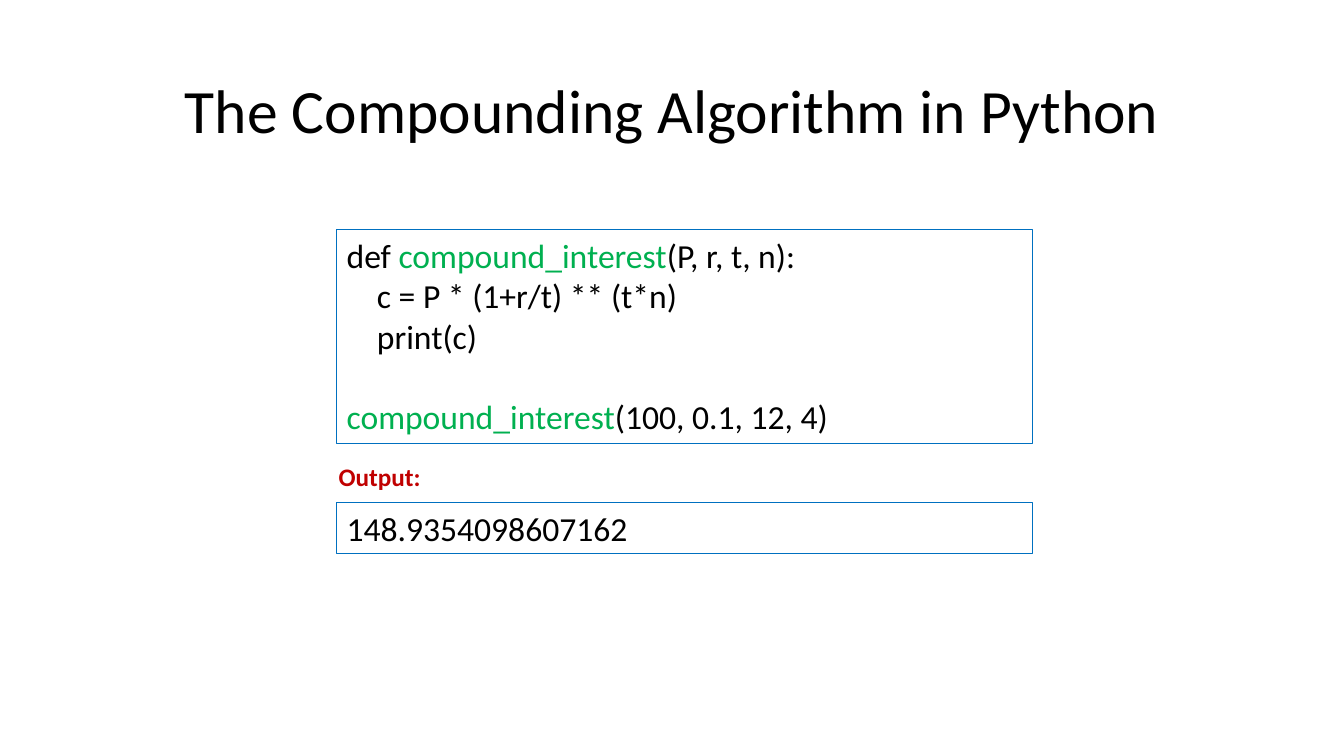
import pptx
import pptx.dml.color
import pptx.enum.text
import pptx.util
from pptx.util import Inches

BLACK, GREEN, RED, BLUE = "000000", "00B050", "C00000", "0070C0"
LEFT, WIDTH = 3.34, 6.9


def rgb(value):
    return pptx.dml.color.RGBColor.from_string(value)


def add_text(paragraph, text, size=24, color=BLACK, bold=False):
    run = paragraph.add_run()
    run.text = text
    run.font.name = "Calibri"
    run.font.size = pptx.util.Pt(size)
    run.font.bold = bold
    run.font.color.rgb = rgb(color)


def set_title(slide, text):
    title = slide.shapes.title
    title.left, title.top = Inches(0.92), Inches(0.4)
    title.width, title.height = Inches(11.5), Inches(1.45)
    title.text_frame.vertical_anchor = pptx.enum.text.MSO_ANCHOR.MIDDLE
    heading = title.text_frame.paragraphs[0]
    heading.alignment = pptx.enum.text.PP_ALIGN.CENTER
    heading.line_spacing = 0.9
    add_text(heading, text, size=44)


def add_box(slide, left, top, width, height, border=None, wrap=True):
    box = slide.shapes.add_textbox(
        Inches(left), Inches(top), Inches(width), Inches(height))
    box.text_frame.word_wrap = wrap
    if border:
        box.line.color.rgb = rgb(border)
        box.line.width = pptx.util.Pt(0.75)
    return box.text_frame


def add_code(frame, lines):
    for number, (indent, gap, parts) in enumerate(lines):
        line = frame.add_paragraph() if number else frame.paragraphs[0]
        line.space_before = pptx.util.Pt(gap)
        line._p.get_or_add_pPr().set("marL", str(Inches(indent)))
        for text, color in parts:
            add_text(line, text, color=color)


def main():
    presentation = pptx.Presentation()
    presentation.slide_width = Inches(13.33)
    presentation.slide_height = Inches(7.5)
    slide = presentation.slides.add_slide(presentation.slide_layouts[5])
    set_title(slide, "The Compounding Algorithm in Python")

    code = add_box(slide, LEFT, 2.28, WIDTH, 2.12, border=BLUE)
    add_code(code, [
        (0, 0, [("def ", BLACK), ("compound_interest", GREEN),
                ("(P, r, t, n):", BLACK)]),
        (0.3, 0, [("c = P * (1+r/t) ** (t*n)", BLACK)]),
        (0.3, 0, [("print(c)", BLACK)]),
        (0, 29, [("compound_interest", GREEN), ("(100, 0.1, 12, 4)", BLACK)]),
    ])

    result = add_box(slide, LEFT, 4.99, WIDTH, 0.5, border=BLUE)
    add_text(result.paragraphs[0], "148.9354098607162")

    output_label = add_box(slide, 3.26, 4.53, 1.02, 0.4, wrap=False)
    add_text(output_label.paragraphs[0], "Output:", size=18, color=RED, bold=True)

    presentation.save("out.pptx")


if __name__ == "__main__":
    main()
